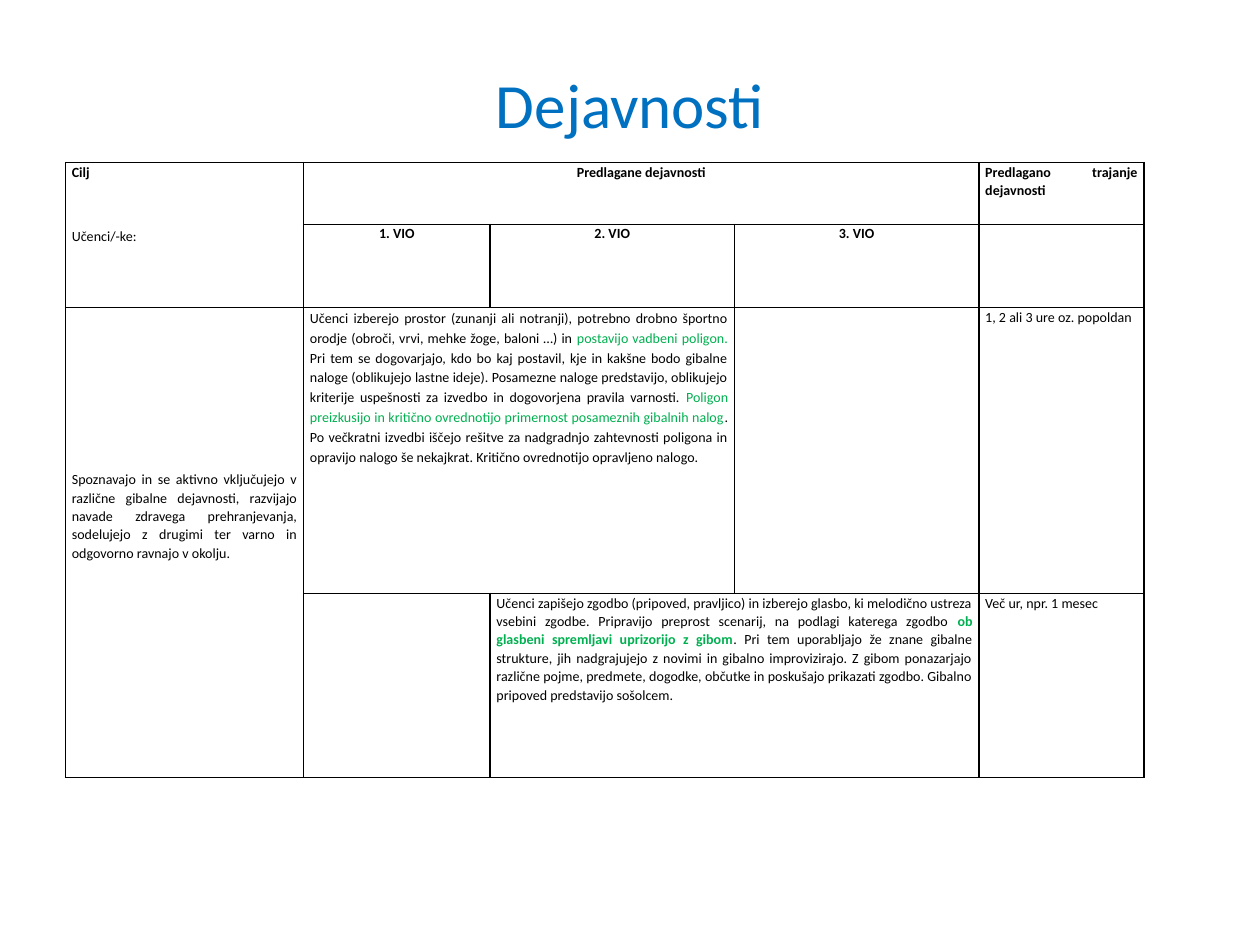
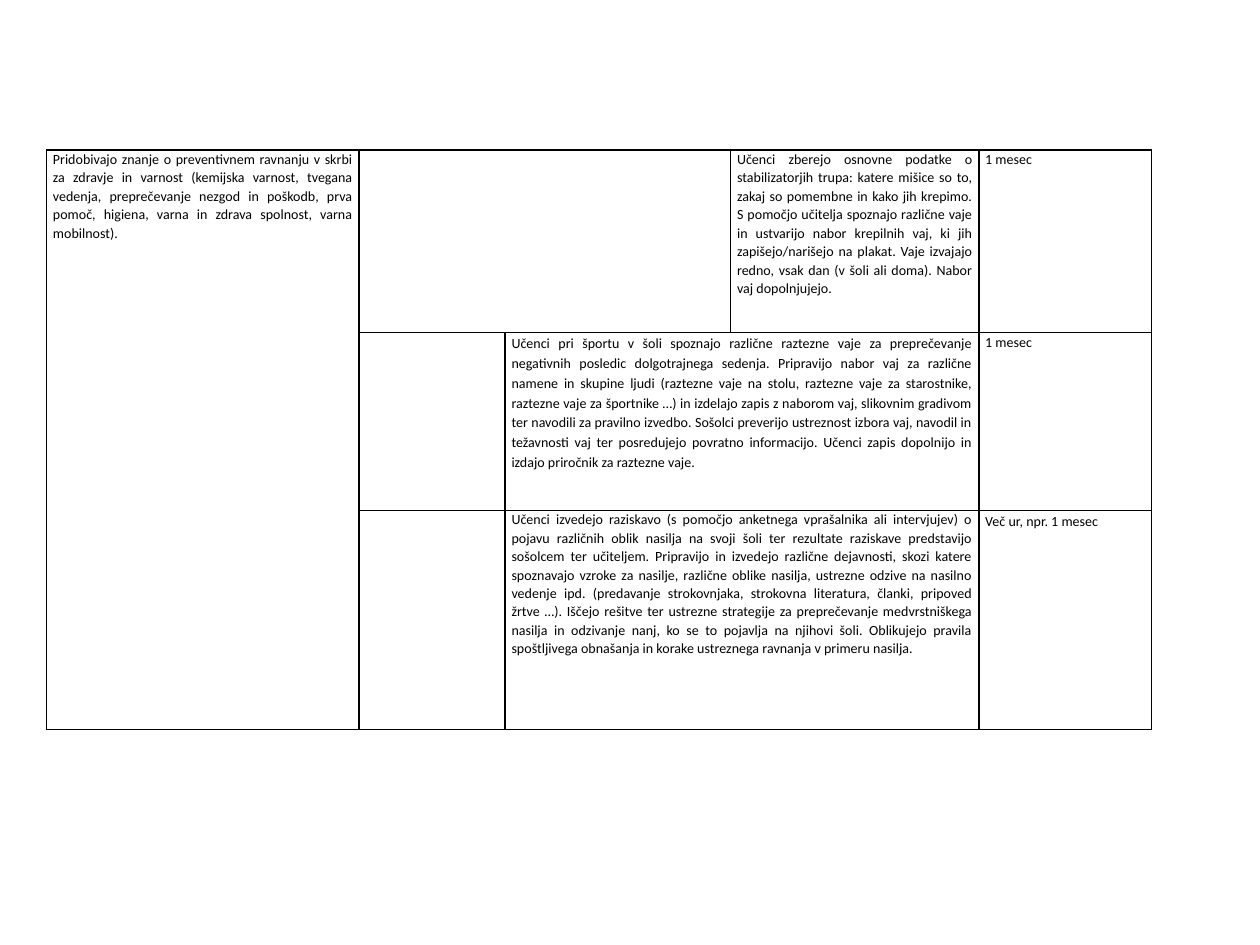
from lxml import etree
from pptx import Presentation
from pptx import util as u
from pptx.dml import color
from pptx.enum import text
from pptx.oxml import ns

COLOURS = {"title": "0070C0", "body": "000000", "accent": "00B050", "border": "000000"}
FONT = "Calibri"
CENTER, JUSTIFY = text.PP_ALIGN.CENTER, text.PP_ALIGN.JUSTIFY


def add_runs(para, runs, size, align, spacing, after=0):
    para.alignment = align
    para.line_spacing = spacing
    para.space_after = u.Pt(after)
    for words, colour, bold in runs:
        span = para.add_run()
        span.text = words
        span.font.name = FONT
        span.font.size = u.Pt(size)
        span.font.bold = bold
        span.font.color.rgb = color.RGBColor.from_string(COLOURS[colour])


def add_grid(page, left, top, widths, heights, entries):
    frame = page.shapes.add_table(
        len(heights), len(widths), u.Inches(left), u.Inches(top),
        u.Inches(sum(widths)), u.Inches(sum(heights)))
    grid = frame.table
    grid.first_row = grid.horz_banding = False
    for column, width in zip(grid.columns, widths):
        column.width = u.Inches(width)
    for row, height in zip(grid.rows, heights):
        row.height = u.Inches(height)
    for cell in grid.iter_cells():
        properties = cell._tc.get_or_add_tcPr()
        for side in ("lnL", "lnR", "lnT", "lnB"):
            line = etree.SubElement(properties, ns.qn("a:" + side), w=str(u.Pt(1)))
            fill = etree.SubElement(line, ns.qn("a:solidFill"))
            etree.SubElement(fill, ns.qn("a:srgbClr"), val=COLOURS["border"])
        cell.fill.background()
        cell.margin_left = cell.margin_right = u.Inches(0.05)
        cell.margin_top = cell.margin_bottom = 0
    for row, column, down, across, align, spacing, paragraphs in entries:
        cell = grid.cell(row, column)
        if down * across > 1:
            cell.merge(grid.cell(row + down - 1, column + across - 1))
        for index, (runs, after) in enumerate(paragraphs):
            frame = cell.text_frame
            para = frame.add_paragraph() if index else frame.paragraphs[0]
            add_runs(para, runs, 8, align, spacing, after)
    return grid


deck = Presentation()
deck.slide_width, deck.slide_height = u.Inches(10), u.Inches(7.5)
blank = deck.slide_layouts[6]

page = deck.slides.add_slide(blank)
goal = "Spoznavajo in se aktivno vključujejo v različne gibalne dejavnosti, razvijajo navade zdravega prehranjevanja, sodelujejo z drugimi ter varno in odgovorno ravnajo v okolju."
course = [
    ("Učenci izberejo prostor (zunanji ali notranji), potrebno drobno športno orodje (obroči, vrvi, mehke žoge, baloni …) in ", "body", False),
    ("postavijo vadbeni poligon.", "accent", False),
    (" Pri tem se dogovarjajo, kdo bo kaj postavil, kje in kakšne bodo gibalne naloge (oblikujejo lastne ideje). Posamezne naloge predstavijo, oblikujejo kriterije uspešnosti za izvedbo in dogovorjena pravila varnosti. ", "body", False),
    ("Poligon preizkusijo in kritično ovrednotijo primernost posameznih gibalnih nalog", "accent", False),
    (". Po večkratni izvedbi iščejo rešitve za nadgradnjo zahtevnosti poligona in opravijo nalogo še nekajkrat. Kritično ovrednotijo opravljeno nalogo.", "body", False),
]
story = [
    ("Učenci zapišejo zgodbo (pripoved, pravljico) in izberejo glasbo, ki melodično ustreza vsebini zgodbe. Pripravijo preprost scenarij, na podlagi katerega zgodbo ", "body", False),
    ("ob glasbeni spremljavi uprizorijo z gibom", "accent", True),
    (". Pri tem uporabljajo že znane gibalne strukture, jih nadgrajujejo z novimi in gibalno improvizirajo. Z gibom ponazarjajo različne pojme, predmete, dogodke, občutke in poskušajo prikazati zgodbo. Gibalno pripoved predstavijo sošolcem.", "body", False),
]
entries = [
    (0, 0, 2, 1, JUSTIFY, 1.07, [([("Cilj", "body", True)], 26.5),
                                 ([("Učenci/-ke:", "body", False)], 8)]),
    (0, 1, 1, 3, CENTER, 1.07, [([("Predlagane dejavnosti", "body", True)], 8)]),
    (0, 4, 1, 1, JUSTIFY, 1.07, [([("Predlagano trajanje dejavnosti", "body", True)], 8)]),
    (2, 0, 2, 1, JUSTIFY, 1.07, [([(goal, "body", False)], 8)]),
    (2, 1, 1, 2, JUSTIFY, 1.15, [(course, 8)]),
    (2, 4, 1, 1, JUSTIFY, 1.07, [([("1, 2 ali 3 ure oz. popoldan", "body", False)], 8)]),
    (3, 2, 1, 2, JUSTIFY, 1.07, [(story, 8)]),
    (3, 4, 1, 1, JUSTIFY, 1.07, [([("Več ur, npr. 1 mesec", "body", False)], 8)]),
]
for level in (1, 2, 3):
    entries.append((1, level, 1, 1, CENTER, 1.07, [([(f"{level}. VIO", "body", True)], 8)]))
activities = add_grid(page, 0.52, 1.29, [1.89, 1.48, 1.94, 1.94, 1.31],
                      [0.49, 0.66, 2.27, 1.46], entries)
activities.cell(2, 0).margin_top = u.Inches(1.29)

title = page.shapes.add_textbox(u.Inches(0.69), u.Inches(0.13), u.Inches(8.62), u.Inches(1.45))
title.text_frame.word_wrap = True
title.text_frame.vertical_anchor = text.MSO_ANCHOR.MIDDLE
add_runs(title.text_frame.paragraphs[0], [("Dejavnosti", "title", False)], 36, CENTER, 0.9)

page = deck.slides.add_slide(blank)
prevention = "Pridobivajo znanje o preventivnem ravnanju v skrbi za zdravje in varnost (kemijska varnost, tvegana vedenja, preprečevanje nezgod in poškodb, prva pomoč, higiena, varna in zdrava spolnost, varna mobilnost)."
core = "Učenci zberejo osnovne podatke o stabilizatorjih trupa: katere mišice so to, zakaj so pomembne in kako jih krepimo. S pomočjo učitelja spoznajo različne vaje in ustvarijo nabor krepilnih vaj, ki jih zapišejo/narišejo na plakat. Vaje izvajajo redno, vsak dan (v šoli ali doma). Nabor vaj dopolnjujejo."
stretching = "Učenci pri športu v šoli spoznajo različne raztezne vaje za preprečevanje negativnih posledic dolgotrajnega sedenja. Pripravijo nabor vaj za različne namene in skupine ljudi (raztezne vaje na stolu, raztezne vaje za starostnike, raztezne vaje za športnike …) in izdelajo zapis z naborom vaj, slikovnim gradivom ter navodili za pravilno izvedbo. Sošolci preverijo ustreznost izbora vaj, navodil in težavnosti vaj ter posredujejo povratno informacijo. Učenci zapis dopolnijo in izdajo priročnik za raztezne vaje."
violence = "Učenci izvedejo raziskavo (s pomočjo anketnega vprašalnika ali intervjujev) o pojavu različnih oblik nasilja na svoji šoli ter rezultate raziskave predstavijo sošolcem ter učiteljem. Pripravijo in izvedejo različne dejavnosti, skozi katere spoznavajo vzroke za nasilje, različne oblike nasilja, ustrezne odzive na nasilno vedenje ipd. (predavanje strokovnjaka, strokovna literatura, članki, pripoved žrtve …). Iščejo rešitve ter ustrezne strategije za preprečevanje medvrstniškega nasilja in odzivanje nanj, ko se to pojavlja na njihovi šoli. Oblikujejo pravila spoštljivega obnašanja in korake ustreznega ravnanja v primeru nasilja."
entries = [(0, 1, 1, 2, JUSTIFY, 1.07, [])]
for row, column, down, across, spacing, words in (
        (0, 0, 3, 1, 1.07, prevention),
        (0, 3, 1, 1, 1.07, core),
        (0, 4, 1, 1, 1.07, "1 mesec"),
        (1, 2, 1, 2, 1.15, stretching),
        (1, 4, 1, 1, 1.07, "1 mesec"),
        (2, 2, 1, 2, 1.07, violence),
        (2, 4, 1, 1, 1.15, "Več ur, npr. 1 mesec")):
    entries.append((row, column, down, across, JUSTIFY, spacing, [([(words, "body", False)], 8)]))
add_grid(page, 0.37, 1.19, [2.48, 1.16, 1.79, 1.97, 1.37], [1.45, 1.41, 1.74], entries)

deck.save("out.pptx")
